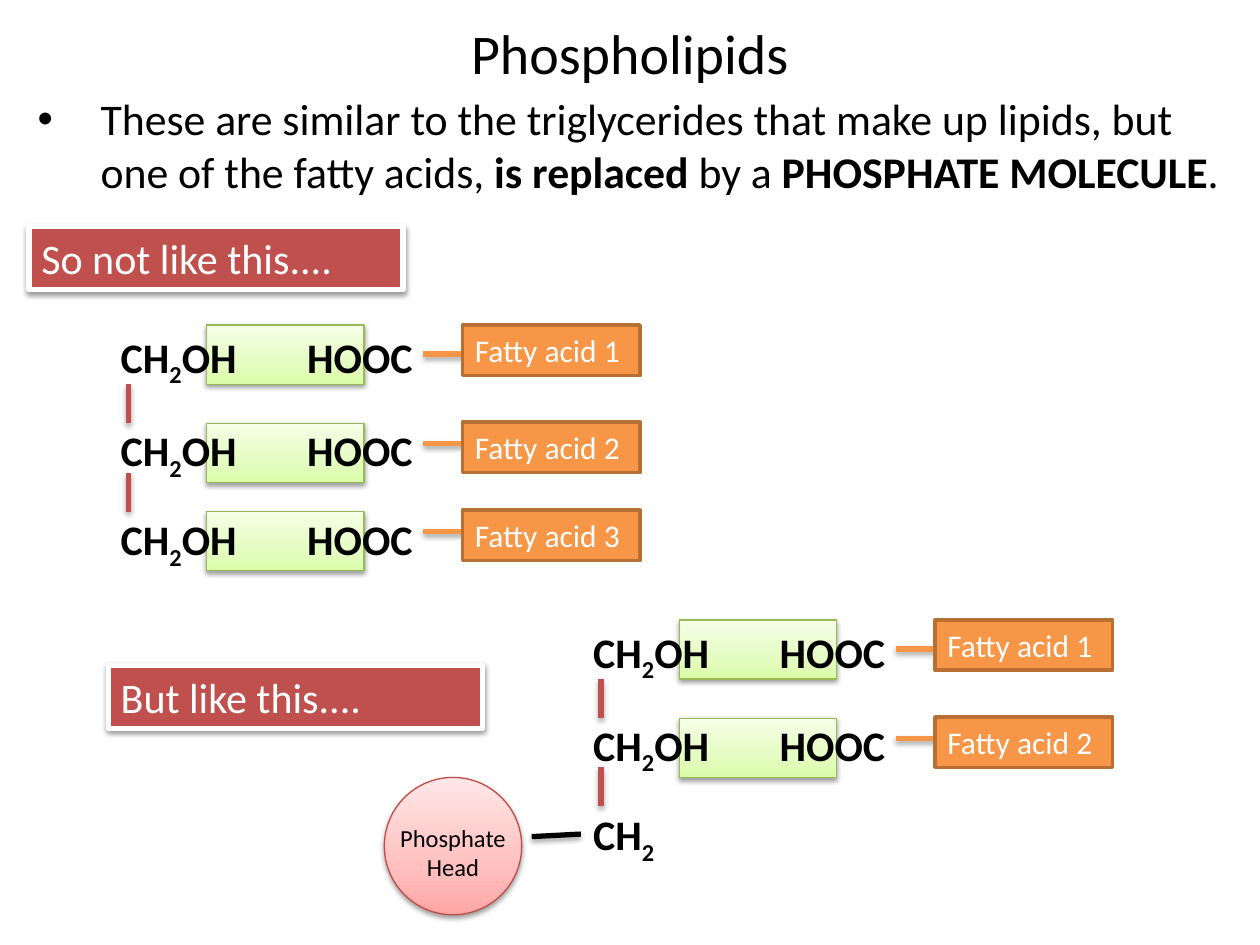
import pptx
import pptx.dml.color
import pptx.enum.shapes
import pptx.enum.text
import pptx.oxml
import pptx.oxml.ns
import pptx.util
from lxml import etree

Inches = pptx.util.Inches
Pt = pptx.util.Pt
qn = pptx.oxml.ns.qn
RECTANGLE = pptx.enum.shapes.MSO_SHAPE.RECTANGLE
OVAL = pptx.enum.shapes.MSO_SHAPE.OVAL
CENTER = pptx.enum.text.PP_ALIGN.CENTER
LEFT = pptx.enum.text.PP_ALIGN.LEFT

BLACK, WHITE, RED, ORANGE = "000000", "FFFFFF", "C0504D", "F79646"
GREEN_STOPS = ((0, "DAFDA7"), (35, "E4FCC2"), (100, "F5FFE7"))
PINK_STOPS = ((0, "FFA6A5"), (35, "FFC0BF"), (100, "FFE7E7"))
ROW_TOPS = (0, 0.74, 1.45)
BOX_TOPS = (0, 0.78, 1.48)
ACID_TOPS = (0, 0.77, 1.47)
ACID_BOND_TOPS = (0.23, 0.94, 1.64)
CARBON_BOND_TOPS = (0.47, 1.17)


def color(value):
    return pptx.dml.color.RGBColor.from_string(value)


def add_shadow(shape, opacity, distance):
    """Drop a soft black shadow straight down; opacity in percent, distance in points."""
    properties = shape._element.spPr
    for effects in properties.findall(qn("a:effectLst")):
        properties.remove(effects)
    effects = etree.SubElement(properties, qn("a:effectLst"))
    shadow = etree.SubElement(
        effects, qn("a:outerShdw"), blurRad=str(Pt(3.1)), dist=str(Pt(distance)),
        dir="5400000", rotWithShape="0")
    black = etree.SubElement(shadow, qn("a:srgbClr"), val=BLACK)
    etree.SubElement(black, qn("a:alpha"), val=str(opacity * 1000))


def add_box(slide, kind, box, line_color, line_width, shadow=True):
    shape = slide.shapes.add_shape(kind, *map(Inches, box))
    shape.line.color.rgb = color(line_color)
    shape.line.width = Pt(line_width)
    shape.shadow.inherit = False
    if shadow:
        add_shadow(shape, 38, 1.6)
    return shape


def fill_gradient(shape, stops):
    """Blend the (percent, colour) stops from the bottom edge to the top."""
    shape.fill.gradient()
    shape.fill.gradient_angle = 90
    stop_list = shape._element.spPr.find(qn("a:gradFill")).find(qn("a:gsLst"))
    stop_list.clear()
    for position, value in stops:
        stop = etree.SubElement(stop_list, qn("a:gs"), pos=str(position * 1000))
        etree.SubElement(stop, qn("a:srgbClr"), val=value)


def add_line(slide, start, end, line_color):
    line = slide.shapes.add_connector(
        pptx.enum.shapes.MSO_CONNECTOR.STRAIGHT, *map(Inches, start + end))
    line.line.color.rgb = color(line_color)
    line.line.width = Pt(3)
    add_shadow(line, 35, 1.8)


def style_paragraph(paragraph, size, text_color, alignment=LEFT):
    paragraph.alignment = alignment
    paragraph.font.name = "Calibri"
    paragraph.font.size = Pt(size)
    paragraph.font.color.rgb = color(text_color)


def write_text(shape, text, size, text_color, alignment=LEFT):
    frame = shape.text_frame
    frame.word_wrap = True
    frame.vertical_anchor = pptx.enum.text.MSO_ANCHOR.TOP
    frame.text = text
    for paragraph in frame.paragraphs:
        style_paragraph(paragraph, size, text_color, alignment)
    return frame


def add_text(slide, box, text, size, alignment=LEFT):
    return write_text(slide.shapes.add_textbox(*map(Inches, box)), text, size, BLACK, alignment)


def add_formula(slide, left, top, *parts):
    """Write a bold formula; every second part is a subscript."""
    paragraph = add_text(slide, (left, top, 1.33, 0.5), "", 24).paragraphs[0]
    paragraph.font.bold = True
    for index, part in enumerate(parts):
        run = paragraph.add_run()
        run.text = part
        if index % 2:
            run.font._element.set("baseline", "-25000")


def add_heading(slide, box):
    frame = add_text(slide, box, "Phospholipids", 32, CENTER)
    frame.vertical_anchor = pptx.enum.text.MSO_ANCHOR.MIDDLE


def add_introduction(slide, box):
    paragraph = add_text(slide, box, "", 25).paragraphs[0]
    paragraph.space_before = Pt(5)
    for text, bold in (
            ("These are similar to the triglycerides that make up lipids, "
             "but one of the fatty acids, ", False),
            ("is replaced ", True), ("by a ", False),
            ("PHOSPHATE MOLECULE", True), (".", False)):
        run = paragraph.add_run()
        run.text = text
        run.font.bold = bold
    properties = paragraph._element.get_or_add_pPr()
    properties.set("marL", str(Inches(0.5)))
    properties.set("indent", str(Inches(-0.5)))
    bullet_font = pptx.oxml.parse_xml(
        f'<a:buFont {pptx.oxml.ns.nsdecls("a")} typeface="Arial"/>')
    bullet = pptx.oxml.parse_xml(f'<a:buChar {pptx.oxml.ns.nsdecls("a")} char="•"/>')
    properties.find(qn("a:spcBef")).addnext(bullet_font)
    bullet_font.addnext(bullet)


def add_label(slide, left, top, text):
    label = add_box(slide, RECTANGLE, (left, top, 2.97, 0.5), WHITE, 3)
    label.fill.solid()
    label.fill.fore_color.rgb = color(RED)
    write_text(label, text, 24, WHITE)


def add_fatty_acid_row(slide, left, top, row):
    green = add_box(slide, RECTANGLE, (left + 0.78, top + BOX_TOPS[row], 1.25, 0.47),
                    "98B955", 0.75)
    fill_gradient(green, GREEN_STOPS)
    add_formula(slide, left + 1.48, top + ROW_TOPS[row], "HOOC")
    add_formula(slide, left, top + ROW_TOPS[row], "CH", "2", "OH")
    bond_top = top + ACID_BOND_TOPS[row]
    add_line(slide, (left + 2.5, bond_top), (left + 3.05, bond_top), ORANGE)
    acid = add_box(slide, RECTANGLE, (left + 2.81, top + ACID_TOPS[row], 1.41, 0.4),
                   "B76F34", 2, shadow=False)
    acid.fill.solid()
    acid.fill.fore_color.rgb = color(ORANGE)
    write_text(acid, f"Fatty acid {row + 1}", 18, WHITE)


def add_molecule(slide, left, top, acid_count):
    """Draw three linked carbons, the first acid_count of them facing a fatty acid."""
    for row, row_top in enumerate(ROW_TOPS):
        if row < acid_count:
            add_fatty_acid_row(slide, left, top, row)
        else:
            add_formula(slide, left, top + row_top, "CH", "2")
    for bond_top in CARBON_BOND_TOPS:
        start = top + bond_top
        add_line(slide, (left + 0.16, start), (left + 0.16, start + 0.31), RED)


def add_phosphate_head(slide, left, top):
    head = add_box(slide, OVAL, (left, top, 1.09, 1.09), "BF4C48", 0.75)
    fill_gradient(head, PINK_STOPS)
    add_text(slide, (left - 0.08, top + 0.31, 1.25, 0.57), "Phosphate\nHead", 14, CENTER)
    add_line(slide, (left + 1.56, top + 0.45), (left + 1.17, top + 0.47), BLACK)


def main():
    presentation = pptx.Presentation()
    presentation.slide_width = Inches(10)
    presentation.slide_height = Inches(7.5)
    slide = presentation.slides.add_slide(presentation.slide_layouts[6])
    add_heading(slide, (0.5, 0.22, 9, 0.38))
    add_introduction(slide, (0.2, 0.68, 9.61, 6.61))
    add_molecule(slide, 0.86, 2.58, acid_count=3)
    add_label(slide, 0.23, 1.8, "So not like this....")
    add_molecule(slide, 4.61, 4.92, acid_count=2)
    add_phosphate_head(slide, 3.05, 6.17)
    add_label(slide, 0.86, 5.28, "But like this....")
    presentation.save("out.pptx")


if __name__ == "__main__":
    main()
